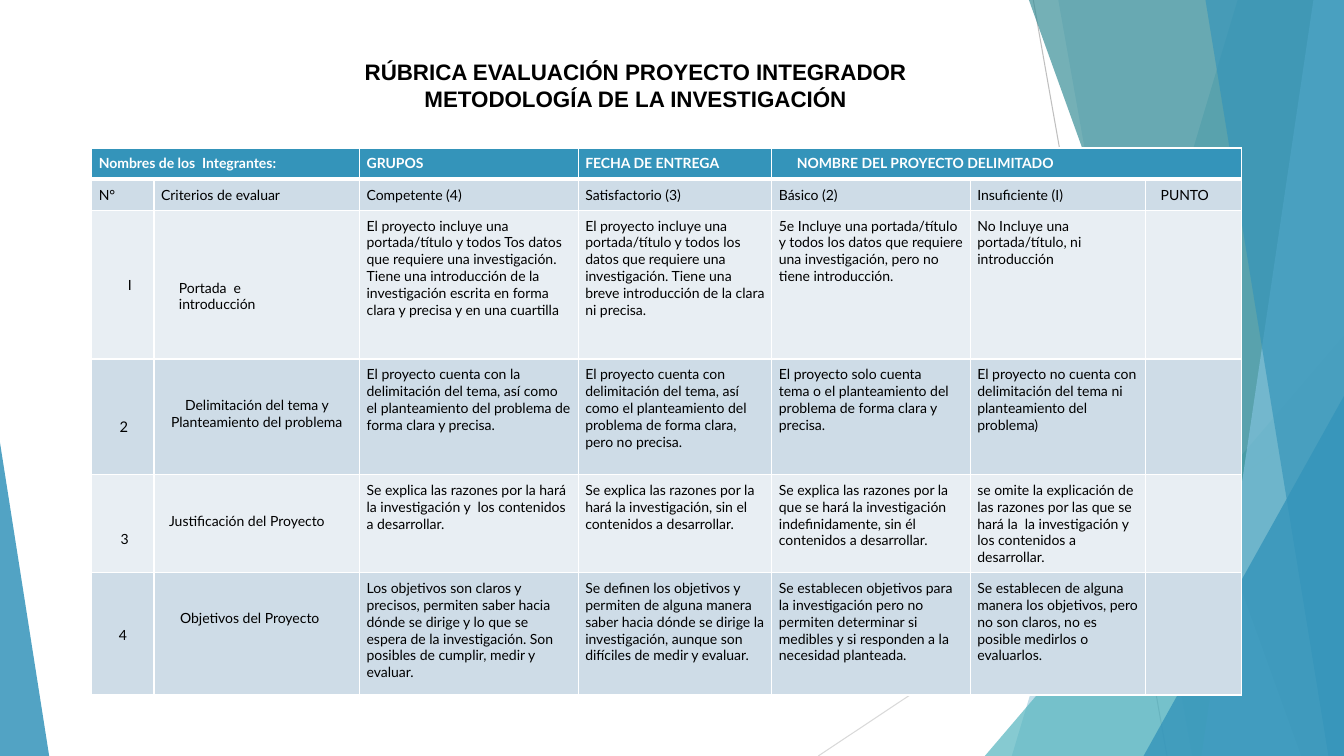
"""Build the evaluation rubric slide for the integrating project."""
import pptx
import pptx.dml.color
import pptx.enum.shapes
import pptx.enum.text
import pptx.oxml
import pptx.oxml.ns
import pptx.util
from lxml import etree

Cm = pptx.util.Cm
Pt = pptx.util.Pt
RGB = pptx.dml.color.RGBColor.from_string
qn = pptx.oxml.ns.qn
CENTER = pptx.enum.text.PP_ALIGN.CENTER

COLORS = {
    "white": "FFFFFF", "black": "000000", "blue": "3494BA", "sky": "7FC1DB",
    "aqua": "58B6C0", "teal": "3A8F98", "dark": "CEDCE7", "light": "E8EEF3",
    "gray": "BFBFBF", "pale": "D9D9D9",
}
WIDE, HIGH = 33.87, 19.05

deck = pptx.Presentation()
deck.slide_width, deck.slide_height = Cm(WIDE), Cm(HIGH)
slide = deck.slides.add_slide(deck.slide_layouts[6])
shapes = slide.shapes


def style(text, font, size, color, bold):
    """Format every run of a text frame."""
    for para in text.paragraphs:
        for run in para.runs:
            run.font.name = font
            run.font.size = Pt(size)
            run.font.bold = bold
            run.font.color.rgb = RGB(COLORS[color])


def edge(cell, side, width):
    """Return a white border element for one side of a cell."""
    line = etree.SubElement(cell._tc.get_or_add_tcPr(), qn("a:" + side), w=str(Pt(width)))
    fill = etree.SubElement(line, qn("a:solidFill"))
    etree.SubElement(fill, qn("a:srgbClr"), val=COLORS["white"])
    return line


for ends, color in [((26.04, 0, 29.41, HIGH), "gray"), ((WIDE, 10.24, 20.62, HIGH), "pale")]:
    line = shapes.add_connector(pptx.enum.shapes.MSO_CONNECTOR.STRAIGHT, *map(Cm, ends))
    line.line.color.rgb = RGB(COLORS[color])
    line.line.width = Pt(0.75)
    etree.SubElement(line._element.spPr, qn("a:effectLst"))

PANELS = [
    ("band", (31.19, 25.5), "blue", 30),
    ("band", (26.67, 30.05), "blue", 20),
    ("peak", (24.82, 8.46, 9.04, 10.59, 1), "aqua", 72),
    ("band", (25.93, 32.79), "teal", 70),
    ("band", (33.1, 30.28), "sky", 70),
    ("band", (30.38, 33.48), "blue", 65),
    ("peak", (28.82, 9.98, 5.05, 9.07, 1), "blue", 80),
    ("peak", (0, 11.15, 1.24, 7.9, 0), "blue", 85),
]
for kind, geom, color, alpha in PANELS:
    if kind == "band":
        top, base = geom
        form = shapes.build_freeform(Cm(top), 0)
        corners = [(WIDE, 0), (WIDE, HIGH), (base, HIGH)]
        form.add_line_segments([(Cm(x), Cm(y)) for x, y in corners], close=True)
        panel = form.convert_to_shape()
    else:
        *box, tip = geom
        panel = shapes.add_shape(pptx.enum.shapes.MSO_SHAPE.ISOSCELES_TRIANGLE, *map(Cm, box))
        panel.adjustments[0] = tip
    panel.shadow.inherit = False
    panel.line.fill.background()
    panel.fill.solid()
    panel.fill.fore_color.rgb = RGB(COLORS[color])
    tint = panel._element.spPr.find(".//" + qn("a:srgbClr"))
    etree.SubElement(tint, qn("a:alpha"), val=str(alpha * 1000))

ROWS = [
    ["Nombres de los  Integrantes:", "", "GRUPOS", "FECHA DE ENTREGA",
     "NOMBRE DEL PROYECTO DELIMITADO", "", ""],
    ["N°", "Criterios de evaluar", "Competente (4)", "Satisfactorio (3)",
     "Básico (2)", "Insuficiente (I)", "PUNTO"],
    ["I", "Portada  e\nintroducción",
     "El proyecto incluye una portada/título y todos Tos datos que requiere una investigación. "
     "Tiene una introducción de la investigación escrita en forma clara y precisa y en una cuartilla",
     "El proyecto incluye una portada/título y todos los datos que requiere una investigación. "
     "Tiene una breve introducción de la clara ni precisa.",
     "5e Incluye una portada/título y todos los datos que requiere una investigación, "
     "pero no tiene introducción.",
     "No Incluye una portada/título, ni introducción", ""],
    ["2", "Delimitación del tema y Planteamiento del problema",
     "El proyecto cuenta con la delimitación del tema, así como el planteamiento del problema "
     "de forma clara y precisa.",
     "El proyecto cuenta con delimitación del tema, así como el planteamiento del problema "
     "de forma clara, pero no precisa.",
     "El proyecto solo cuenta\ntema o el planteamiento del problema de forma clara y precisa.",
     "El proyecto no cuenta con delimitación del tema ni planteamiento del problema)", ""],
    ["3", "Justificación del Proyecto",
     "Se explica las razones por la hará la investigación y  los contenidos a desarrollar.",
     "Se explica las razones por la hará la investigación, sin el contenidos a desarrollar.",
     "Se explica las razones por la que se hará la investigación indefinidamente, "
     "sin él contenidos a desarrollar.",
     "se omite la explicación de las razones por las que se hará la  la investigación y "
     "los contenidos a desarrollar.", ""],
    ["4", "Objetivos del Proyecto",
     "Los objetivos son claros y precisos, permiten saber hacia dónde se dirige y lo que se "
     "espera de la investigación. Son posibles de cumplir, medir y evaluar.",
     "Se definen los objetivos y permiten de alguna manera saber hacia dónde se dirige la "
     "investigación, aunque son difíciles de medir y evaluar.",
     "Se establecen objetivos para la investigación pero no permiten determinar si medibles "
     "y si responden a la necesidad planteada.",
     "Se establecen de alguna manera los objetivos, pero no son claros, no es posible "
     "medirlos o evaluarlos.", ""],
]
WIDTHS = [1.57, 5.18, 5.51, 4.88, 5, 4.42, 2.41]
HEIGHTS = [0.76, 0.76, 3.75, 2.91, 2.46, 3.08]
PAD = 0.18
INSETS = {
    (0, 4): (0.63, PAD), (1, 6): (0.38, PAD),
    (2, 0): (0.53, 1.68), (2, 1): (0.63, 1.74),
    (3, 0): (0.23, 1.48), (3, 1): (PAD, 0.96),
    (4, 0): (0.28, 1.42), (4, 1): (0.38, 0.96),
    (5, 0): (PAD, 1.37), (5, 1): (0.66, 0.94),
}
frame = shapes.add_table(len(ROWS), len(WIDTHS), Cm(2.31), Cm(3.73),
                         Cm(sum(WIDTHS)), Cm(sum(HEIGHTS)))
table = frame.table
for col, width in zip(table.columns, WIDTHS):
    col.width = Cm(width)
for row, height in zip(table.rows, HEIGHTS):
    row.height = Cm(height)
for r, row in enumerate(ROWS):
    for c, words in enumerate(row):
        cell = table.cell(r, c)
        cell.text_frame.text = words
        left, top = INSETS.get((r, c), (PAD, PAD))
        cell.margin_left, cell.margin_top = Cm(left), Cm(top)
        cell.margin_right = cell.margin_bottom = Cm(PAD)
        size = 10.5 if (r, c) == (3, 0) else 10
        style(cell.text_frame, "Lato", size, "black" if r else "white", r == 0)
        if r > 1 and c == 0 or (r, c) == (3, 1):
            cell.text_frame.paragraphs[0].alignment = CENTER
        for side in ("lnL", "lnR", "lnT", "lnB"):
            thick = (r, side) in [(0, "lnB"), (1, "lnT")]
            edge(cell, side, 3 if thick else 1)
        cell.fill.solid()
        shade = "blue" if r == 0 else "dark" if r % 2 else "light"
        cell.fill.fore_color.rgb = RGB(COLORS[shade])
table.cell(0, 0).merge(table.cell(0, 1))
table.cell(0, 4).merge(table.cell(0, 6))

title = shapes.add_textbox(Cm(5.43), Cm(1.35), Cm(21.18), Cm(1.63)).text_frame
title.word_wrap = True
title.text = "RÚBRICA EVALUACIÓN PROYECTO INTEGRADOR\nMETODOLOGÍA DE LA INVESTIGACIÓN"
style(title, "Arial", 16, "black", True)
for para in title.paragraphs:
    para.alignment = CENTER

deck.save("out.pptx")
